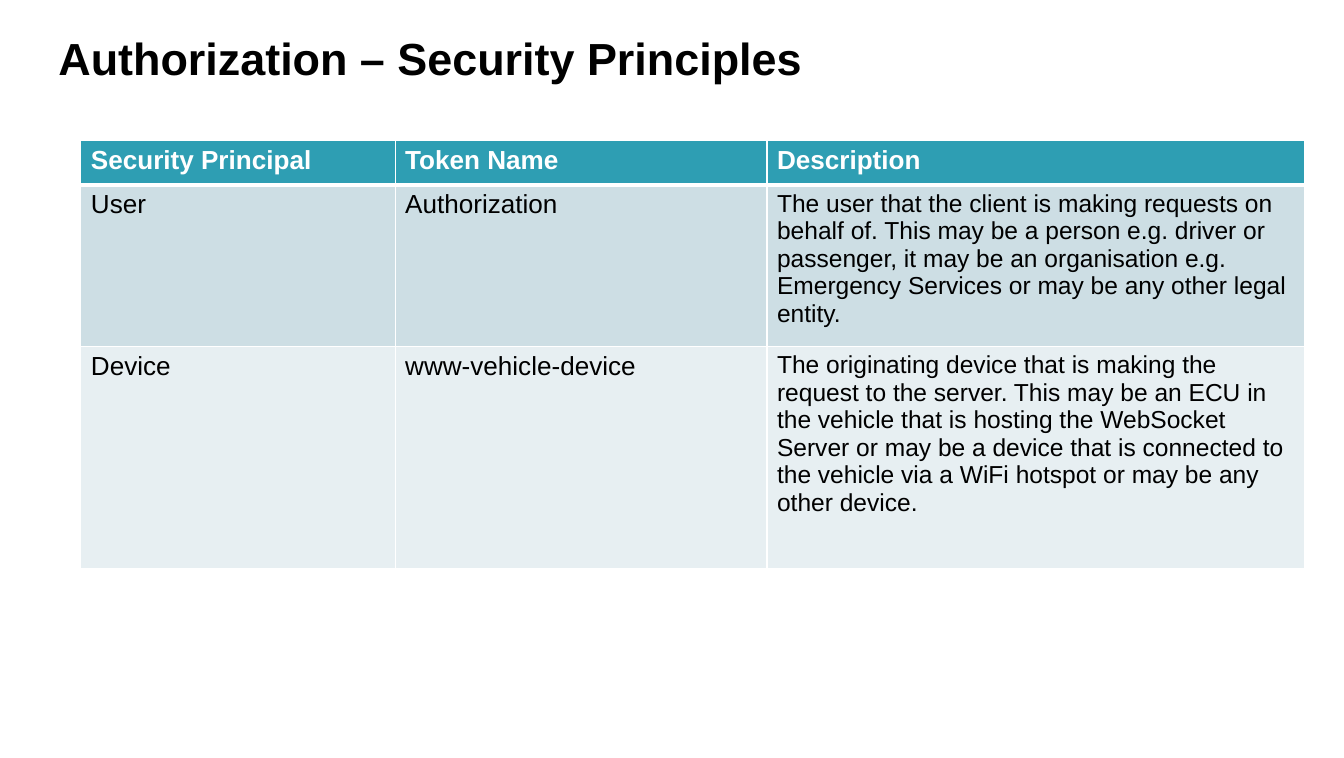
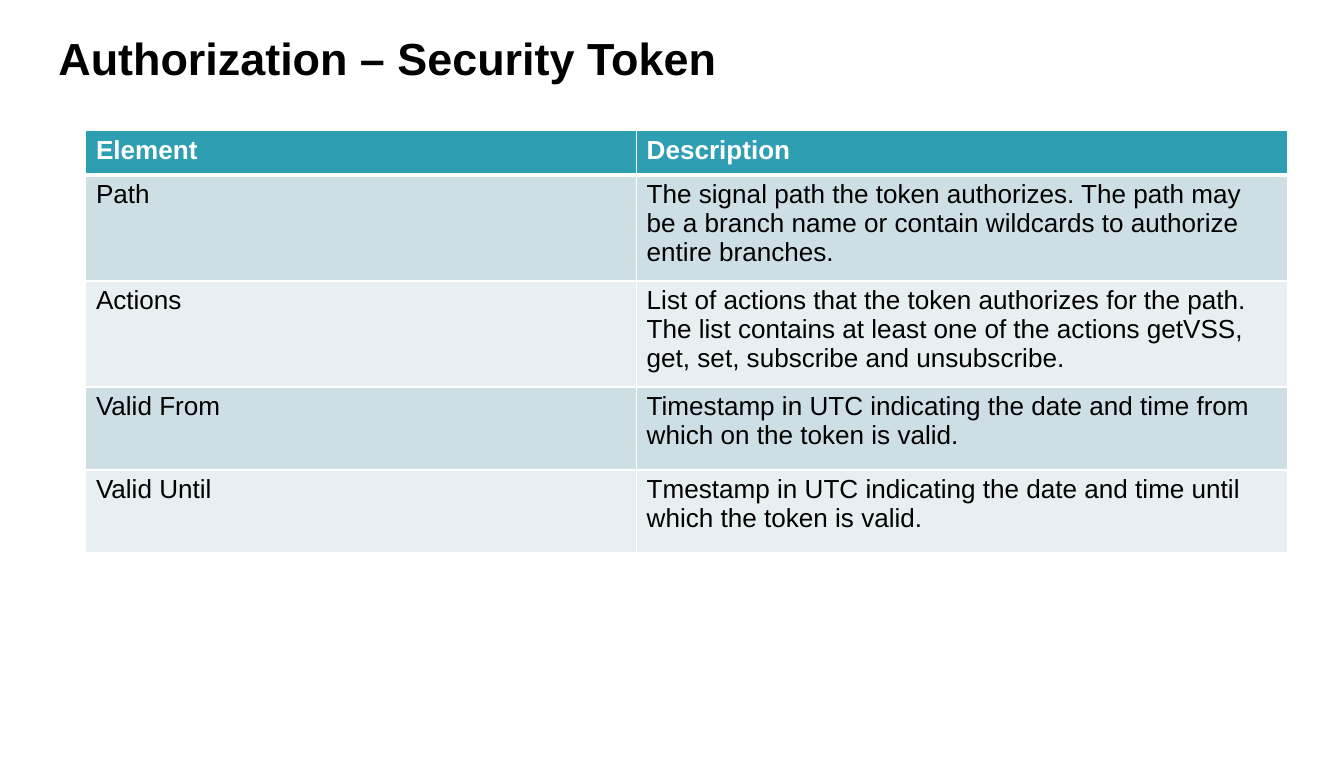
from lxml import etree
from pptx import Presentation
from pptx.dml.color import RGBColor
from pptx.enum import text
from pptx.oxml.ns import qn
from pptx.util import Inches, Pt

FONT = "Arial"
BLACK, WHITE = "000000", "FFFFFF"
HEADER, BANDS = "2E9EB3", ("CDDEE4", "E7EFF2")
THIN, THICK = 0.96, 3
TITLE_SIZE, BODY_SIZE, SMALL_SIZE = 32, 18.6, 17.5

SLIDES = [
    dict(
        title="Authorization – Security Principles",
        at=(0.8, 1.39), cols=(3.11, 3.68, 5.32), heights=(0.44, 1.6, 2.2),
        description_size=SMALL_SIZE,
        rows=[
            ("Security Principal", "Token Name", "Description"),
            ("User", "Authorization",
             "The user that the client is making requests on behalf of. This may be a person "
             "e.g. driver or passenger, it may be an organisation e.g. Emergency Services or "
             "may be any other legal entity."),
            ("Device", "www-vehicle-device",
             "The originating device that is making the request to the server. This may be an "
             "ECU in the vehicle that is hosting the WebSocket Server or may be a device that "
             "is connected to the vehicle via a WiFi hotspot or may be any other device."),
        ],
    ),
    dict(
        title="Authorization – Security Token",
        at=(0.85, 1.29), cols=(5.45, 6.44), heights=(0.44, 1.05, 1.05, 0.82, 0.82),
        description_size=BODY_SIZE,
        rows=[
            ("Element", "Description"),
            ("Path",
             "The signal path the token authorizes. The path may be a branch name or contain "
             "wildcards to authorize entire branches."),
            ("Actions",
             "List of actions that the token authorizes for the path. The list contains at "
             "least one of the actions getVSS, get, set, subscribe and unsubscribe."),
            ("Valid From",
             "Timestamp in UTC indicating the date and time from which on the token is valid."),
            ("Valid Until",
             "Tmestamp in UTC indicating the date and time until which the token is valid."),
        ],
    ),
]


def rgb(color):
    return RGBColor.from_string(color)


def write(tf, words, size=BODY_SIZE, color=BLACK, bold=False):
    tf.word_wrap = True
    r = tf.paragraphs[0].add_run()
    r.text = words
    r.font.name, r.font.size, r.font.bold = FONT, Pt(size), bold
    r.font.color.rgb = rgb(color)


def set_borders(cell, **widths):
    """Draw white cell borders; they must come before the fill in the XML."""
    tc_pr = cell._tc.get_or_add_tcPr()
    for i, side in enumerate("LRTB"):
        ln = etree.Element(qn(f"a:ln{side}"), w=str(int(Pt(widths.get(side, THIN)))))
        fill = etree.SubElement(ln, qn("a:solidFill"))
        etree.SubElement(fill, qn("a:srgbClr"), val=WHITE)
        tc_pr.insert(i, ln)


def add_title(s, words):
    box = s.shapes.add_textbox(Inches(0.48), Inches(0.2), Inches(11.97), Inches(0.73))
    box.text_frame.vertical_anchor = text.MSO_ANCHOR.MIDDLE
    write(box.text_frame, words, size=TITLE_SIZE, bold=True)


def add_table(s, rows, at, cols, heights, description_size):
    lengths = [Inches(v) for v in (*at, sum(cols), sum(heights))]
    table = s.shapes.add_table(len(rows), len(cols), *lengths).table
    for column, width in zip(table.columns, cols):
        column.width = Inches(width)
    for i, (row, height, words) in enumerate(zip(table.rows, heights, rows)):
        row.height = Inches(height)
        for j, (cell, content) in enumerate(zip(row.cells, words)):
            cell.fill.solid()
            if i == 0:
                cell.fill.fore_color.rgb = rgb(HEADER)
                write(cell.text_frame, content, color=WHITE, bold=True)
                set_borders(cell, B=THICK)
            else:
                cell.fill.fore_color.rgb = rgb(BANDS[(i - 1) % 2])
                last = j == len(cols) - 1
                write(cell.text_frame, content, size=description_size if last else BODY_SIZE)
                set_borders(cell, T=THICK if i == 1 else THIN)


def main():
    prs = Presentation()
    prs.slide_width, prs.slide_height = Inches(13.3), Inches(7.5)
    for content in SLIDES:
        s = prs.slides.add_slide(prs.slide_layouts[6])
        add_title(s, content["title"])
        add_table(s, **{k: v for k, v in content.items() if k != "title"})
    prs.save("out.pptx")


if __name__ == "__main__":
    main()
